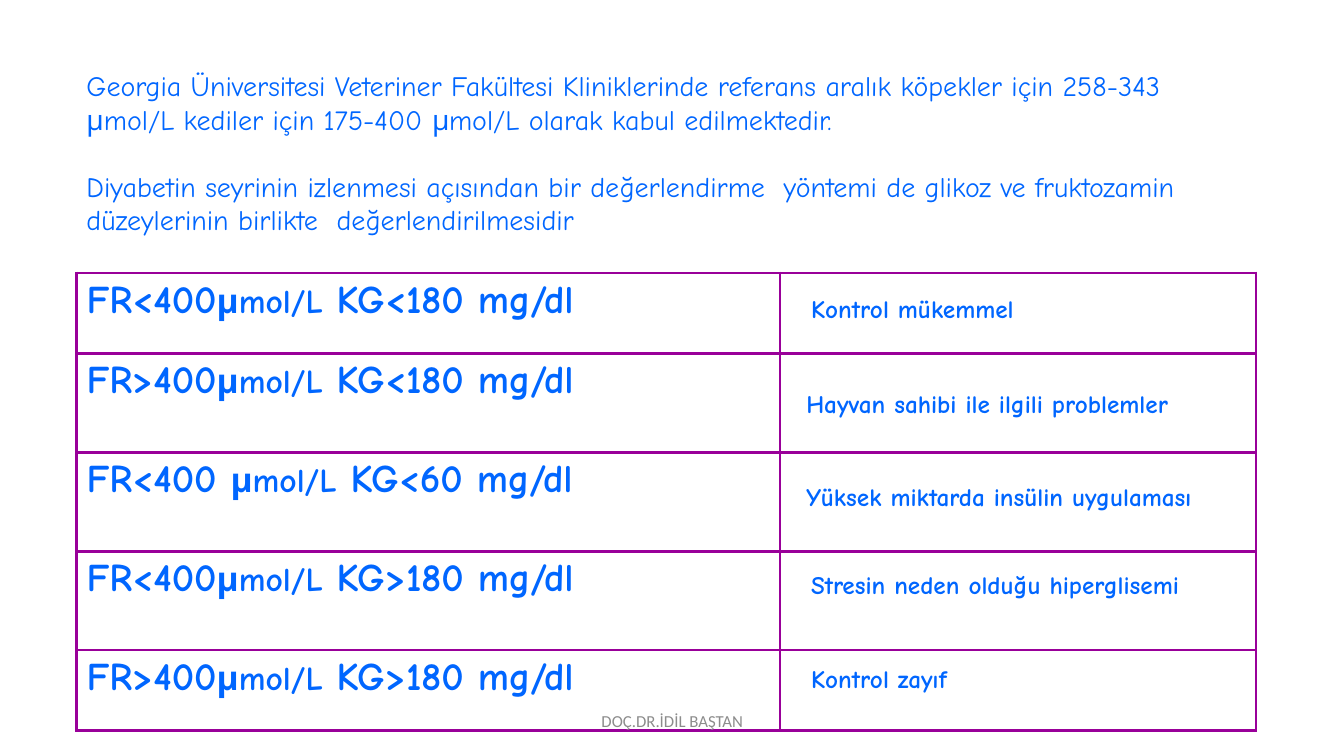
from lxml.etree import SubElement
from pptx import Presentation
from pptx.dml.color import RGBColor
from pptx.enum.text import MSO_ANCHOR as Anchor, PP_ALIGN as Align
from pptx.oxml.ns import qn
from pptx.util import Cm, Pt

BLUE, PURPLE, GREY = "0066FF", "990099", "8C8C8C"
UNIT = "μmol/L"

INTRO = [
    "Georgia Üniversitesi Veteriner Fakültesi Kliniklerinde referans aralık köpekler için 258-343 "
    "μmol/L kediler için 175-400 μmol/L olarak kabul edilmektedir.",
    "Diyabetin seyrinin izlenmesi açısından bir değerlendirme  yöntemi de glikoz ve fruktozamin "
    "düzeylerinin birlikte  değerlendirilmesidir",
]
CRITERIA = [
    ("FR<400", " KG<180 mg/dl"),
    ("FR>400", " KG<180 mg/dl"),
    ("FR<400 ", " KG<60 mg/dl"),
    ("FR<400", " KG>180 mg/dl"),
    ("FR>400", " KG>180 mg/dl"),
]
ROW_HEIGHTS = [2.03, 2.49, 2.49, 2.49, 2.03]
VERDICTS = [
    ("Kontrol mükemmel", 20.19, 7.26, 6.32),
    ("Hayvan sahibi ile ilgili problemler", 20.07, 9.65, 11.05),
    ("Yüksek miktarda insülin uygulaması", 20.07, 12.01, 11.4),
    ("Stresin neden olduğu hiperglisemi", 20.19, 14.22, 11.07),
    ("Kontrol zayıf", 20.19, 16.59, 4.8),
]


def rgb(code):
    """Turn a hex string into a colour."""
    return RGBColor.from_string(code)


def add_text(paragraph, text, size=18, color=BLUE, font="Comic Neue", bold=False):
    """Append one formatted run to a paragraph."""
    run = paragraph.add_run()
    run.text = text
    run.font.size, run.font.name, run.font.bold = Pt(size), font, bold
    run.font.color.rgb = rgb(color)


def add_box(slide, paragraphs, left, top, width, height,
            align=Align.LEFT, anchor=Anchor.TOP, gap=0, **style):
    """Place a text box with one or more paragraphs."""
    frame = slide.shapes.add_textbox(Cm(left), Cm(top), Cm(width), Cm(height)).text_frame
    frame.word_wrap, frame.vertical_anchor = True, anchor
    for index, text in enumerate(paragraphs):
        paragraph = frame.add_paragraph() if index else frame.paragraphs[0]
        paragraph.alignment = align
        if index:
            paragraph.space_before = Pt(gap)
        add_text(paragraph, text, **style)


def frame_cell(cell, color=PURPLE, width=2.25):
    """Draw all four borders of a cell and leave it unfilled."""
    properties = cell._tc.get_or_add_tcPr()
    for side in ("a:lnL", "a:lnR", "a:lnT", "a:lnB"):
        border = SubElement(properties, qn(side), w=str(Pt(width)))
        fill = SubElement(border, qn("a:solidFill"))
        SubElement(fill, qn("a:srgbClr"), val=color)
    cell.fill.background()


def add_criteria_table(slide):
    """Build the table of fructosamine and glucose criteria."""
    table = slide.shapes.add_table(len(CRITERIA), 2, Cm(1.93), Cm(6.88),
                                   Cm(29.72), Cm(sum(ROW_HEIGHTS))).table
    table.first_row = table.horz_banding = False
    table.columns[0].width, table.columns[1].width = Cm(17.73), Cm(11.99)
    for row, height, (fructosamine, glucose) in zip(table.rows, ROW_HEIGHTS, CRITERIA):
        row.height = Cm(height)
        for cell in row.cells:
            frame_cell(cell)
        paragraph = row.cells[0].text_frame.paragraphs[0]
        paragraph.alignment = Align.JUSTIFY
        for text, size in ((fructosamine, 28), (UNIT, 24), (glucose, 28)):
            add_text(paragraph, text, size=size, bold=True)


def main():
    """Build and save the slide."""
    deck = Presentation()
    deck.slide_width, deck.slide_height = Cm(33.87), Cm(19.05)
    slide = deck.slides.add_slide(deck.slide_layouts[6])
    add_box(slide, INTRO, 1.93, 1.6, 29.72, 4.52, gap=24, size=20)
    add_criteria_table(slide)
    for verdict, left, top, width in VERDICTS:
        add_box(slide, [verdict], left, top, width, 1.8, bold=True)
    add_box(slide, ["DOÇ.DR.İDİL BAŞTAN"], 11.23, 17.65, 11.43, 1.02, align=Align.CENTER,
            anchor=Anchor.MIDDLE, size=12, color=GREY, font="Calibri")
    deck.save("out.pptx")


if __name__ == "__main__":
    main()
